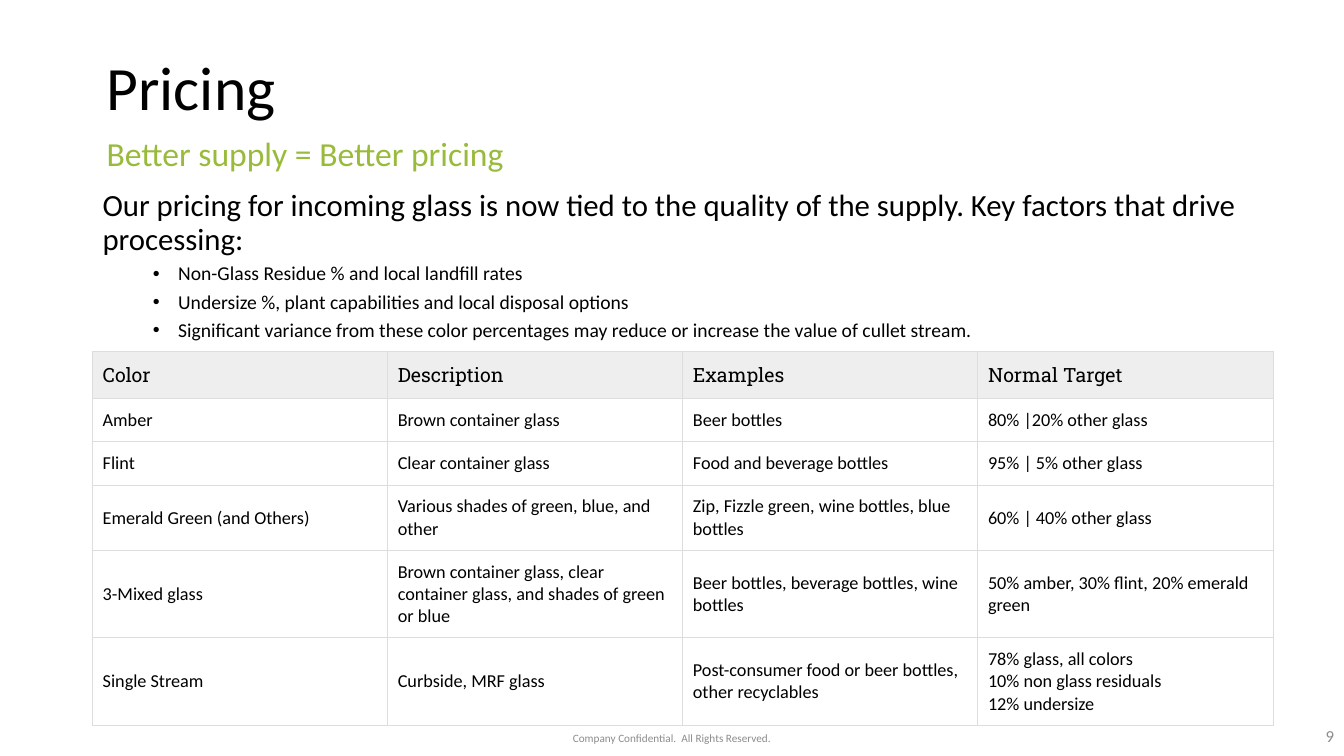
from lxml.etree import SubElement
from pptx import Presentation
from pptx.dml.color import RGBColor
from pptx.enum.text import MSO_ANCHOR, PP_ALIGN
from pptx.oxml.ns import qn
from pptx.util import Pt

BLACK = RGBColor(0x00, 0x00, 0x00)
WHITE = RGBColor(0xFF, 0xFF, 0xFF)
GREEN = RGBColor(0x99, 0xBB, 0x3B)
GRAY = RGBColor(0x8C, 0x8C, 0x8C)
HEADER_FILL = RGBColor(0xEE, 0xEE, 0xEE)
BORDER = RGBColor(0xDD, 0xDD, 0xDD)

TITLE = "Pricing"
SUBTITLE = "Better supply = Better pricing"
INTRO = ("Our pricing for incoming glass is now tied to the quality of the supply. "
         "Key factors that drive processing:")
FACTORS = [
    "Non-Glass Residue % and local landfill rates",
    "Undersize %, plant capabilities and local disposal options",
    "Significant variance from these color percentages may reduce or increase "
    "the value of cullet stream.",
]
FOOTER = "Company Confidential.  All Rights Reserved."
PAGE = "9"
GLASS_TYPES = [
    ("Color", "Description", "Examples", "Normal Target"),
    ("Amber", "Brown container glass", "Beer bottles", "80% |20% other glass"),
    ("Flint", "Clear container glass", "Food and beverage bottles",
     "95% | 5% other glass"),
    ("Emerald Green (and Others)", "Various shades of green, blue, and other",
     "Zip, Fizzle green, wine bottles, blue bottles", "60% | 40% other glass"),
    ("3-Mixed glass",
     "Brown container glass, clear container glass, and shades of green or blue",
     "Beer bottles, beverage bottles, wine bottles",
     "50% amber, 30% flint, 20% emerald green"),
    ("Single Stream", "Curbside, MRF glass",
     "Post-consumer food or beer bottles, other recyclables",
     "78% glass, all colors\n10% non glass residuals\n12% undersize"),
]
ROW_HEIGHTS = [33.5, 31, 31, 46.5, 62.5, 62.5]
TABLE_LEFT, TABLE_TOP, TABLE_WIDTH = 66.2, 251.2, 843.2
CELL_MARGIN = 7.2

TITLE_FONT = dict(size=Pt(44), name="Calibri", color=BLACK)
SUBTITLE_FONT = dict(size=Pt(24), name="Calibri", color=GREEN)
INTRO_FONT = dict(size=Pt(22), name="Calibri", color=BLACK)
FACTOR_FONT = dict(size=Pt(14), name="Calibri", color=BLACK)
FOOTER_FONT = dict(size=Pt(8), name="Calibri", color=GRAY)
PAGE_FONT = dict(size=Pt(12), name="Calibri", color=GRAY)
HEADER_FONT = dict(size=Pt(14), name="Roboto Slab", color=BLACK)
CELL_FONT = dict(size=Pt(13), name="Calibri", color=BLACK)


def write(p, text, font, **para):
    for key, value in para.items():
        setattr(p, key, value)
    r = p.add_run()
    r.text = text
    for key, value in font.items():
        if key == "color":
            r.font.color.rgb = value
        else:
            setattr(r.font, key, value)


def add_box(s, box, text, font, anchor=MSO_ANCHOR.TOP, **para):
    tf = s.shapes.add_textbox(*map(Pt, box)).text_frame
    tf.word_wrap = True
    tf.vertical_anchor = anchor
    write(tf.paragraphs[0], text, font, **para)
    return tf


def add_bullet(p):
    pPr = p._p.get_or_add_pPr()
    pPr.set("marL", str(Pt(54)))
    pPr.set("indent", str(-Pt(18)))
    SubElement(pPr, qn("a:buFont"), typeface="Arial")
    SubElement(pPr, qn("a:buChar"), char="•")


def add_borders(cell):
    tcPr = cell._tc.get_or_add_tcPr()
    for side in ("lnL", "lnR", "lnT", "lnB"):
        ln = SubElement(tcPr, qn(f"a:{side}"), w=str(Pt(0.75)))
        fill = SubElement(ln, qn("a:solidFill"))
        SubElement(fill, qn("a:srgbClr"), val=str(BORDER))


def add_glass_table(s):
    rows, cols = len(GLASS_TYPES), len(GLASS_TYPES[0])
    table = s.shapes.add_table(rows, cols, Pt(TABLE_LEFT), Pt(TABLE_TOP),
                               Pt(TABLE_WIDTH), Pt(sum(ROW_HEIGHTS))).table
    table.first_row = False
    table.horz_banding = False
    for column in table.columns:
        column.width = Pt(TABLE_WIDTH / cols)
    for i, (texts, height) in enumerate(zip(GLASS_TYPES, ROW_HEIGHTS)):
        table.rows[i].height = Pt(height)
        for j, text in enumerate(texts):
            cell = table.cell(i, j)
            add_borders(cell)
            cell.fill.solid()
            cell.fill.fore_color.rgb = WHITE if i else HEADER_FILL
            cell.vertical_anchor = MSO_ANCHOR.MIDDLE
            for side in ("left", "right", "top", "bottom"):
                setattr(cell, f"margin_{side}", Pt(CELL_MARGIN))
            tf = cell.text_frame
            for k, line in enumerate(text.split("\n")):
                p = tf.add_paragraph() if k else tf.paragraphs[0]
                write(p, line, CELL_FONT if i else HEADER_FONT)


def main():
    prs = Presentation()
    prs.slide_width, prs.slide_height = Pt(960), Pt(540)
    s = prs.slides.add_slide(prs.slide_layouts[6])

    add_box(s, (69.1, 12.2, 432.7, 104.4), TITLE, TITLE_FONT,
            MSO_ANCHOR.MIDDLE, line_spacing=0.9)
    add_box(s, (0, 514, 960, 26), FOOTER, FOOTER_FONT,
            MSO_ANCHOR.MIDDLE, alignment=PP_ALIGN.CENTER)
    add_box(s, (744, 511.2, 216, 28.8), PAGE, PAGE_FONT,
            MSO_ANCHOR.MIDDLE, alignment=PP_ALIGN.RIGHT)
    tf = add_box(s, (66.2, 132.5, 828, 355.7), INTRO, INTRO_FONT, line_spacing=0.9)
    for factor in FACTORS:
        p = tf.add_paragraph()
        add_bullet(p)
        write(p, factor, FACTOR_FONT, level=1, line_spacing=0.9, space_before=Pt(5))
    add_glass_table(s)
    add_box(s, (69.1, 94.3, 720, 63.4), SUBTITLE, SUBTITLE_FONT, line_spacing=0.9)

    prs.save("out.pptx")


if __name__ == "__main__":
    main()
